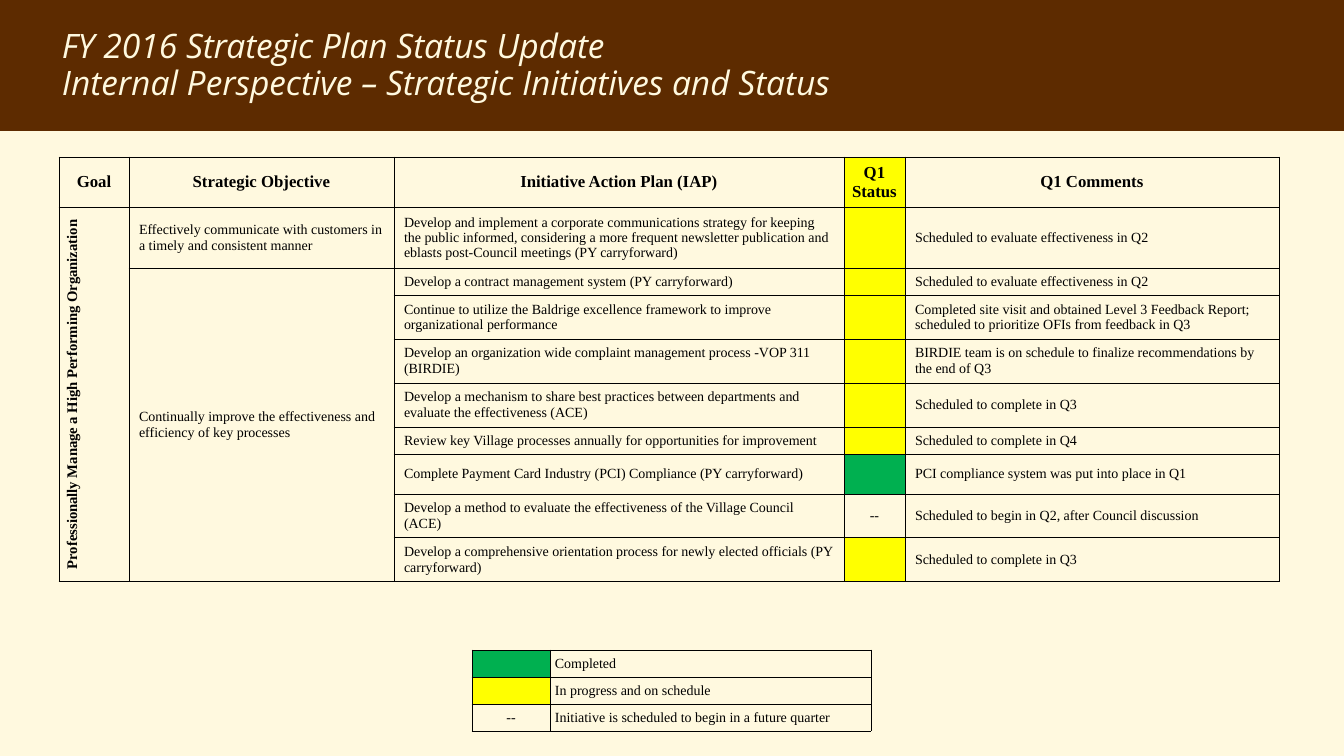
from dataclasses import dataclass
from typing import Any, NamedTuple, Optional

from lxml.etree import SubElement
from pptx import Presentation
from pptx.dml.color import RGBColor
from pptx.enum.shapes import MSO_SHAPE as Shape
from pptx.enum.text import MSO_ANCHOR as Anchor, MSO_AUTO_SIZE as AutoSize, PP_ALIGN as Align
from pptx.oxml.ns import qn
from pptx.util import Emu, Pt

PX_PER_INCH = 100.8


def px(count: int) -> Emu:
    return Emu(round(count * 914400 / PX_PER_INCH))


@dataclass(frozen=True)
class Theme:
    cream: str = "FFF9DF"
    brown: str = "5D2B00"
    black: str = "000000"
    yellow: str = "FFFF00"
    green: str = "00B050"
    title_font: str = "Open Sans"
    table_font: str = "Times New Roman"
    title_size: float = 24
    header_size: float = 12
    goal_size: float = 10.5
    body_size: float = 10
    border_width: float = 0.5


THEME = Theme()


class Status(NamedTuple):
    mark: str
    fill: Optional[str]


COMPLETED = Status("", THEME.green)
ON_SCHEDULE = Status("", THEME.yellow)
FUTURE = Status("--", None)


class Initiative(NamedTuple):
    plan: str
    status: Status
    comment: str
    height: int


@dataclass(frozen=True)
class CellSpec:
    text: str = ""
    size: float = THEME.body_size
    bold: bool = False
    align: Align = Align.LEFT
    fill: Optional[str] = None
    inset: Optional[int] = None
    vert: Optional[str] = None


@dataclass(frozen=True)
class TableSpec:
    left: int
    top: int
    columns: list[int]
    heights: list[int]
    rows: list[list[CellSpec]]


TITLE = ["FY 2016 Strategic Plan Status Update",
         "Internal Perspective – Strategic Initiatives and Status"]
GOAL = "Professionally Manage a High Performing Organization"
OBJECTIVES = {
    1: "Effectively communicate with customers in a timely and consistent manner",
    2: "Continually improve the effectiveness and efficiency of key processes",
}
INITIATIVES = [
    Initiative("Develop and implement a corporate communications strategy for keeping the public "
               "informed, considering a more frequent newsletter publication and eblasts "
               "post-Council meetings (PY carryforward)",
               ON_SCHEDULE, "Scheduled to evaluate effectiveness in Q2", 61),
    Initiative("Develop a contract management system (PY carryforward)",
               ON_SCHEDULE, "Scheduled to evaluate effectiveness in Q2", 27),
    Initiative("Continue to utilize the Baldrige excellence framework to improve "
               "organizational performance", ON_SCHEDULE,
               "Completed site visit and obtained Level 3 Feedback Report; scheduled to "
               "prioritize OFIs from feedback in Q3", 43),
    Initiative("Develop an organization wide complaint management process -VOP 311 (BIRDIE)",
               ON_SCHEDULE,
               "BIRDIE team is on schedule to finalize recommendations by the end of Q3", 44),
    Initiative("Develop a mechanism to share best practices between departments and evaluate "
               "the effectiveness (ACE)", ON_SCHEDULE, "Scheduled to complete in Q3", 44),
    Initiative("Review key Village processes annually for opportunities for improvement",
               ON_SCHEDULE, "Scheduled to complete in Q4", 27),
    Initiative("Complete Payment Card Industry (PCI) Compliance (PY carryforward)",
               COMPLETED, "PCI compliance system was put into place in Q1", 40),
    Initiative("Develop a method to evaluate the effectiveness of the Village Council (ACE)",
               FUTURE, "Scheduled to begin in Q2, after Council discussion", 40),
    Initiative("Develop a comprehensive orientation process for newly elected officials "
               "(PY carryforward)", ON_SCHEDULE, "Scheduled to complete in Q3", 44),
]
LEGEND = [(COMPLETED, "Completed"), (ON_SCHEDULE, "In progress and on schedule"),
          (FUTURE, "Initiative is scheduled to begin in a future quarter")]


def apply(target: Any, values: dict[str, Any]) -> None:
    for name, value in values.items():
        setattr(target, name, value)


def color(value: str) -> RGBColor:
    return RGBColor.from_string(value)


def header_cell(text: str) -> CellSpec:
    return CellSpec(text, THEME.header_size, True, Align.CENTER)


def status_cell(status: Status, inset: Optional[int] = None) -> CellSpec:
    return CellSpec(status.mark, align=Align.CENTER, fill=status.fill, inset=inset)


def draw_borders(cell: Any) -> None:
    props = cell._tc.get_or_add_tcPr()
    for side in ("a:lnL", "a:lnR", "a:lnT", "a:lnB"):
        line = SubElement(props, qn(side), w=str(Pt(THEME.border_width)))
        SubElement(SubElement(line, qn("a:solidFill")), qn("a:srgbClr"), val=THEME.black)


def draw_cell(cell: Any, spec: CellSpec) -> None:
    draw_borders(cell)
    cell.vertical_anchor = Anchor.MIDDLE
    if spec.fill:
        cell.fill.solid()
        cell.fill.fore_color.rgb = color(spec.fill)
    else:
        cell.fill.background()
    if spec.inset is not None:
        sides = ("margin_left", "margin_right", "margin_top", "margin_bottom")
        apply(cell, dict.fromkeys(sides, px(spec.inset)))
    if spec.vert:
        cell._tc.get_or_add_tcPr().set("vert", spec.vert)
    para = cell.text_frame.paragraphs[0]
    para.alignment = spec.align
    if spec.text:
        span = para.add_run()
        span.text = spec.text
        apply(span.font, {"name": THEME.table_font, "size": Pt(spec.size), "bold": spec.bold})
        span.font.color.rgb = color(THEME.black)
    else:  # keeps empty cells from stretching their row
        SubElement(para._p, qn("a:endParaRPr"), sz=str(round(spec.size * 100)))


def draw_table(page: Any, spec: TableSpec) -> Any:
    frame = page.shapes.add_table(len(spec.rows), len(spec.columns), px(spec.left), px(spec.top),
                                  px(sum(spec.columns)), px(sum(spec.heights)))
    table = frame.table
    apply(table, {"first_row": False, "horz_banding": False})
    for column, width in zip(table.columns, spec.columns):
        column.width = px(width)
    for row, height, cells in zip(table.rows, spec.heights, spec.rows):
        row.height = px(height)
        for cell, cell_spec in zip(row.cells, cells):
            draw_cell(cell, cell_spec)
    return table


def draw_title(page: Any) -> None:
    band = page.shapes.add_shape(Shape.RECTANGLE, 0, 0, px(1344), px(131))
    band.shadow.inherit = False
    band.fill.solid()
    band.fill.fore_color.rgb = color(THEME.brown)
    band.line.fill.background()
    box = page.shapes.add_textbox(px(52), px(25), px(1239), px(92))
    apply(box.text_frame, {"word_wrap": True, "auto_size": AutoSize.SHAPE_TO_FIT_TEXT})
    box.text_frame.text = "\n".join(TITLE)
    for para in box.text_frame.paragraphs:
        para.line_spacing = 0.9
        for span in para.runs:
            apply(span.font, {"name": THEME.title_font, "size": Pt(THEME.title_size),
                              "italic": True})
            span.font.color.rgb = color(THEME.cream)


def draw_plan(page: Any) -> None:
    header = [header_cell(text) for text in ("Goal", "Strategic Objective",
                                             "Initiative Action Plan (IAP)")]
    header += [CellSpec("Q1 Status", THEME.header_size, True, Align.CENTER, THEME.yellow, 5),
               header_cell("Q1 Comments")]
    goal = CellSpec(GOAL, THEME.goal_size, True, Align.CENTER, vert="vert270")
    body = [[goal if number == 1 else CellSpec(), CellSpec(OBJECTIVES.get(number, "")),
             CellSpec(item.plan), status_cell(item.status), CellSpec(item.comment)]
            for number, item in enumerate(INITIATIVES, 1)]
    heights = [50] + [item.height for item in INITIATIVES]
    table = draw_table(page, TableSpec(59, 157, [70, 265, 450, 61, 374], heights, [header] + body))
    last = len(INITIATIVES)
    for column, first in enumerate((1, 2)):
        table.cell(first, column).merge(table.cell(last, column))


def draw_legend(page: Any) -> None:
    rows = [[status_cell(status, 5), CellSpec(text, inset=5)] for status, text in LEGEND]
    draw_table(page, TableSpec(472, 650, [78, 321], [27] * len(rows), rows))


def main() -> None:
    deck = Presentation()
    apply(deck, {"slide_width": px(1344), "slide_height": px(756)})
    page = deck.slides.add_slide(deck.slide_layouts[6])
    page.background.fill.solid()
    page.background.fill.fore_color.rgb = color(THEME.cream)
    draw_title(page)
    draw_plan(page)
    draw_legend(page)
    deck.save("out.pptx")


if __name__ == "__main__":
    main()
